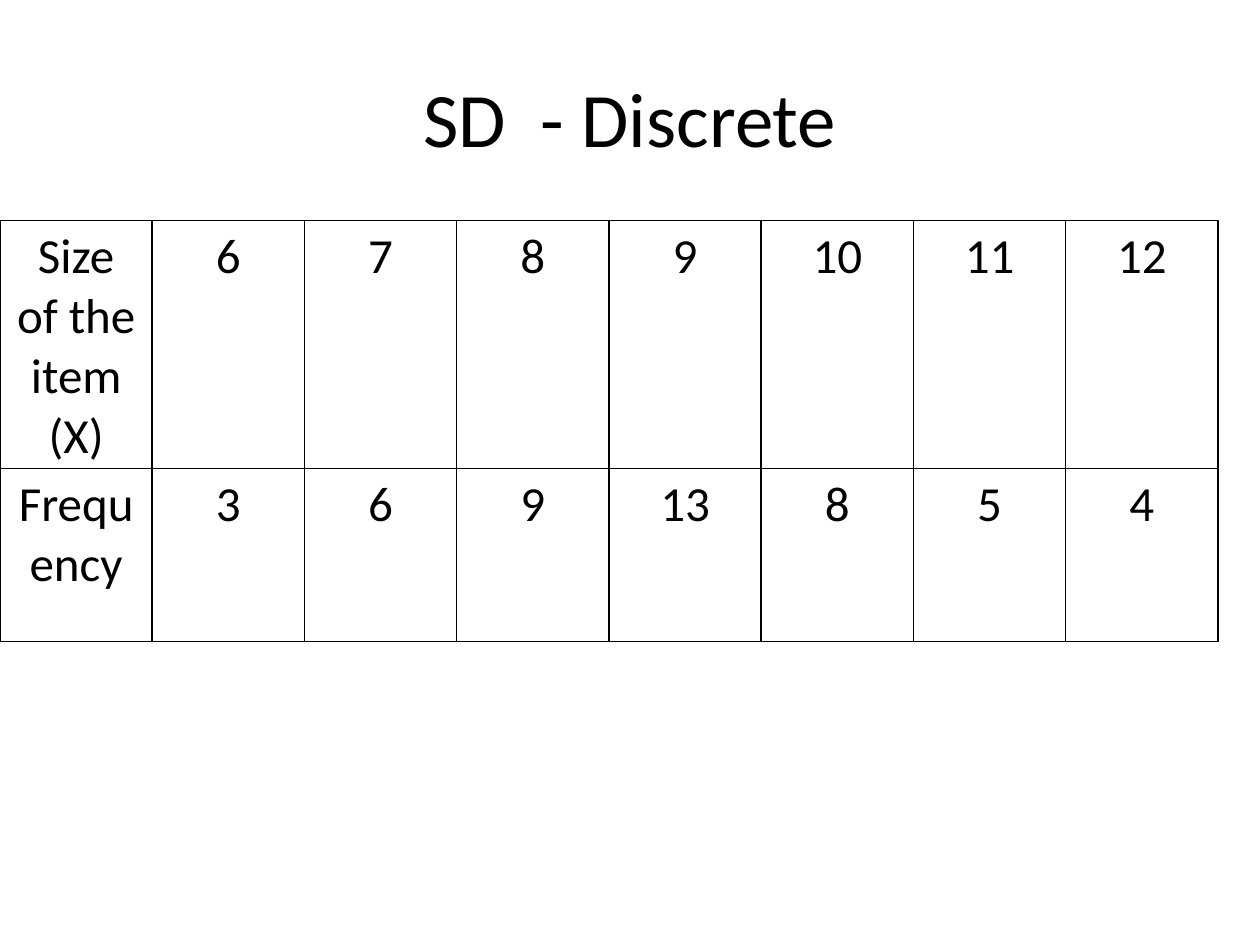
from dataclasses import dataclass

from lxml import etree
from pptx import Presentation
from pptx.dml.color import RGBColor
from pptx.enum.text import MSO_ANCHOR, PP_ALIGN
from pptx.oxml.ns import qn
from pptx.util import Pt

CENTER = PP_ALIGN.CENTER
MIDDLE = MSO_ANCHOR.MIDDLE


@dataclass(frozen=True)
class Theme:
    font: str = "Calibri"
    ink: str = "000000"
    paper: str = "FFFFFF"
    title_size: int = 44
    cell_size: int = 28
    border: int = 1


THEME = Theme()

FREQUENCY_ROWS = [
    ["Size of the item (X)", "6", "7", "8", "9", "10", "11", "12"],
    ["Frequency", "3", "6", "9", "13", "8", "5", "4"],
]


def write_centred(tf, text, size):
    p = tf.paragraphs[0]
    p.alignment = CENTER
    r = p.add_run()
    r.text = text
    r.font.name = THEME.font
    r.font.size = Pt(size)
    r.font.color.rgb = RGBColor.from_string(THEME.ink)


def add_borders(cell):
    """Draw a solid line on all four sides of a cell."""
    tc_pr = cell._tc.get_or_add_tcPr()
    for side in ("a:lnL", "a:lnR", "a:lnT", "a:lnB"):
        ln = etree.SubElement(tc_pr, qn(side), w=str(Pt(THEME.border)))
        fill = etree.SubElement(ln, qn("a:solidFill"))
        etree.SubElement(fill, qn("a:srgbClr"), val=THEME.ink)


def add_title(slide, text, left, top, width, height):
    sp = slide.shapes.add_textbox(Pt(left), Pt(top), Pt(width), Pt(height))
    tf = sp.text_frame
    tf.word_wrap = True
    tf.vertical_anchor = MIDDLE
    write_centred(tf, text, THEME.title_size)


def add_frequency_table(slide, rows, left, top, width, height):
    frame = slide.shapes.add_table(
        len(rows), len(rows[0]), Pt(left), Pt(top), Pt(width), Pt(height)
    )
    table = frame.table
    table.first_row = False
    table.horz_banding = False
    for i, row in enumerate(rows):
        for j, text in enumerate(row):
            cell = table.cell(i, j)
            add_borders(cell)
            cell.fill.background()
            write_centred(cell.text_frame, text, THEME.cell_size)


def main():
    prs = Presentation()
    prs.slide_width, prs.slide_height = Pt(720), Pt(540)
    slide = prs.slides.add_slide(prs.slide_layouts[6])
    background = slide.background.fill
    background.solid()
    background.fore_color.rgb = RGBColor.from_string(THEME.paper)
    add_title(slide, "SD  - Discrete", 36, 21.6, 648, 90)
    add_frequency_table(slide, FREQUENCY_ROWS, 0, 126, 696, 198)
    prs.save("out.pptx")


if __name__ == "__main__":
    main()
